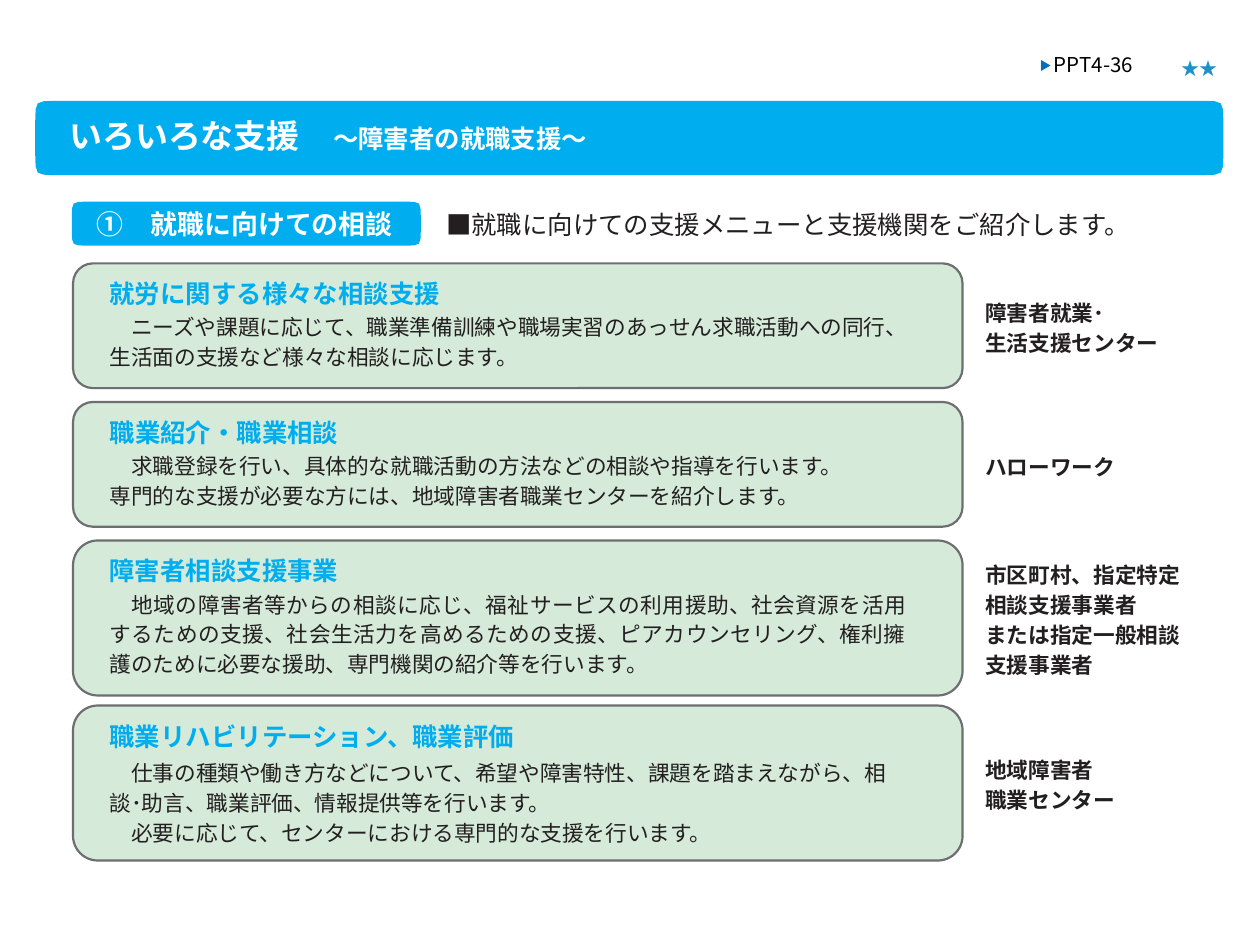
from collections import namedtuple

from lxml import etree
from pptx import Presentation
from pptx.dml.color import RGBColor
from pptx.enum.shapes import MSO_SHAPE
from pptx.enum.text import MSO_ANCHOR, MSO_AUTO_SIZE, PP_ALIGN
from pptx.oxml.ns import qn
from pptx.util import Inches, Pt

ROUNDED = MSO_SHAPE.ROUNDED_RECTANGLE
TOP, MIDDLE = MSO_ANCHOR.TOP, MSO_ANCHOR.MIDDLE
LEFT, JUSTIFY = PP_ALIGN.LEFT, PP_ALIGN.JUSTIFY
FIXED = MSO_AUTO_SIZE.NONE

COLS, ROWS = 100, 75
CELL = Inches(10) // COLS
FONT = "Noto Sans CJK JP"
COLORS = {
    "sky": "00AEEF",
    "mint": "D5EAD8",
    "border": "6D6E71",
    "ink": "231F20",
    "white": "FFFFFF",
    "black": "000000",
    "marker": "0070C0",
    "star": "1B93C9",
}
CORNER = [(1, 0), (0.43, 0.02), (0.13, 0.13), (0.02, 0.43), (0, 1)]

Box = namedtuple("Box", "left top width height")
Support = namedtuple(
    "Support", "top height heading body agency width align spacing before",
    defaults=(LEFT, 1.14, 1))

SUPPORTS = [
    Support(20.9, 9.9, "就労に関する様々な相談支援",
            "　ニーズや課題に応じて、職業準備訓練や職場実習のあっせん求職活動への同行、"
            "生活面の支援など様々な相談に応じます。",
            ["障害者就業･", "生活支援センター"], 65),
    Support(31.9, 9.9, "職業紹介・職業相談",
            "　求職登録を行い、具体的な就職活動の方法などの相談や指導を行います。"
            "専門的な支援が必要な方には、地域障害者職業センターを紹介します。",
            ["ハローワーク"], 59.8),
    Support(42.9, 12.3, "障害者相談支援事業",
            "　地域の障害者等からの相談に応じ、福祉サービスの利用援助、社会資源を活用"
            "するための支援、社会生活力を高めるための支援、ピアカウンセリング、権利擁"
            "護のために必要な援助、専門機関の紹介等を行います。",
            ["市区町村、指定特定\n相談支援事業者", "または指定一般相談\n支援事業者"],
            63.3, JUSTIFY),
    Support(56, 12.3, "職業リハビリテーション、職業評価",
            "　仕事の種類や働き方などについて、希望や障害特性、課題を踏まえながら、"
            "相談･助言、職業評価、情報提供等を行います。\n"
            "　必要に応じて、センターにおける専門的な支援を行います。",
            ["地域障害者\n職業センター"], 63.3, LEFT, Pt(17.1), 2.6),
]


def grid(value):
    return round(value * CELL)


def color(name):
    return RGBColor.from_string(COLORS[name])


def write(paragraph, text, size=12.4, ink="ink", bold=False, baseline=0):
    for index, line in enumerate(text.split("\n")):
        if index:
            paragraph.add_line_break()
        run = paragraph.add_run()
        run.text = line
        run.font.size = Pt(size)
        run.font.bold = bold
        run.font.color.rgb = color(ink)
        run.font.name = FONT
        properties = run._r.get_or_add_rPr()
        etree.SubElement(properties, qn("a:ea"), typeface=FONT)
        if baseline:
            properties.set("baseline", str(baseline * 1000))


def prepare_frame(holder, anchor=TOP, wrap=True):
    frame = holder.text_frame
    frame.margin_left = frame.margin_right = 0
    frame.margin_top = frame.margin_bottom = 0
    frame.auto_size = FIXED
    frame.vertical_anchor = anchor
    frame.word_wrap = wrap
    return frame


def text_area(slide, box, **layout):
    return prepare_frame(slide.shapes.add_textbox(*map(grid, box)), **layout)


def draw_band(slide, box, radius):
    right, bottom = box.left + box.width, box.top + box.height
    near = [(x * radius, y * radius) for x, y in CORNER]
    points = [(box.left + x, box.top + y) for x, y in near]
    points += [(box.left + x, bottom - y) for x, y in reversed(near)]
    points += [(right - x, bottom - y) for x, y in near]
    points += [(right - x, box.top + y) for x, y in reversed(near)]
    corners = [(grid(x), grid(y)) for x, y in points]
    builder = slide.shapes.build_freeform(*corners[0])
    builder.add_line_segments(corners[1:], close=True)
    band = builder.convert_to_shape()
    band.shadow.inherit = False
    band.fill.solid()
    band.fill.fore_color.rgb = color("sky")
    band.line.fill.background()


def add_page_mark(slide, box):
    mark = text_area(slide, box._replace(width=9.9)).paragraphs[0]
    write(mark, "▶ ", size=11.7, ink="marker", baseline=9)
    write(mark, "PPT4-36", size=11.7, ink="black")
    star_box = Box(box.left + 11.3, box.top + 0.5, box.width - 11.3, box.height)
    stars = text_area(slide, star_box, wrap=False).paragraphs[0]
    write(stars, "★★", size=10.3, ink="star")


def add_banner(slide, box):
    draw_band(slide, box, radius=1.6)
    title = slide.shapes.title
    title.element.getparent().append(title.element)
    title.left, title.top = grid(box.left + 2.7), grid(box.top + 1.2)
    title.width, title.height = grid(53), grid(3.3)
    heading = prepare_frame(title).paragraphs[0]
    heading.alignment = LEFT
    write(heading, "いろいろな支援　", size=18.8, ink="white", bold=True)
    write(heading, "～障害者の就職支援～", size=14.5, ink="white", bold=True)


def add_section_line(slide, box):
    draw_band(slide, box._replace(width=27.7), radius=1.2)
    line_box = Box(box.left + 2, box.top + 0.5, box.width - 2, 2.7)
    line = text_area(slide, line_box).paragraphs[0]
    tabs = etree.SubElement(line._p.get_or_add_pPr(), qn("a:tabLst"))
    etree.SubElement(tabs, qn("a:tab"), pos=str(grid(27.7)), algn="l")
    write(line, "①　就職に向けての相談\t", size=15.4, ink="white", bold=True)
    write(line, "■就職に向けての支援メニューと支援機関をご紹介します。", size=14.5)


def add_support(slide, box, support):
    card_box = box._replace(width=70.6)
    card = slide.shapes.add_shape(ROUNDED, *map(grid, card_box))
    card.adjustments[0] = 0.16
    card.shadow.inherit = False
    card.fill.solid()
    card.fill.fore_color.rgb = color("mint")
    card.line.color.rgb = color("border")
    card.line.width = Pt(1.25)

    frame = text_area(slide, Box(box.left + 2.9, box.top + 1.2,
                                 support.width, box.height - 2))
    write(frame.paragraphs[0], support.heading, size=14.5, ink="sky", bold=True)
    body = frame.add_paragraph()
    body.alignment = support.align
    body.line_spacing = support.spacing
    body.space_before = Pt(support.before)
    write(body, support.body)

    agency_box = Box(box.left + 72.4, box.top, box.width - 72.4, box.height)
    agency = text_area(slide, agency_box, anchor=MIDDLE)
    for index, name in enumerate(support.agency):
        line = agency.add_paragraph() if index else agency.paragraphs[0]
        line.line_spacing = 1.16
        write(line, name, bold=True)


def main():
    deck = Presentation()
    deck.slide_width, deck.slide_height = grid(COLS), grid(ROWS)
    slide = deck.slides.add_slide(deck.slide_layouts[5])
    for support in SUPPORTS:
        add_support(slide, Box(5.8, support.top, 91.3, support.height), support)
    add_section_line(slide, Box(5.7, 16, 90, 3.5))
    add_banner(slide, Box(2.8, 8, 94.3, 5.9))
    add_page_mark(slide, Box(82.5, 4.1, 15, 2.1))
    deck.save("out.pptx")


if __name__ == "__main__":
    main()
